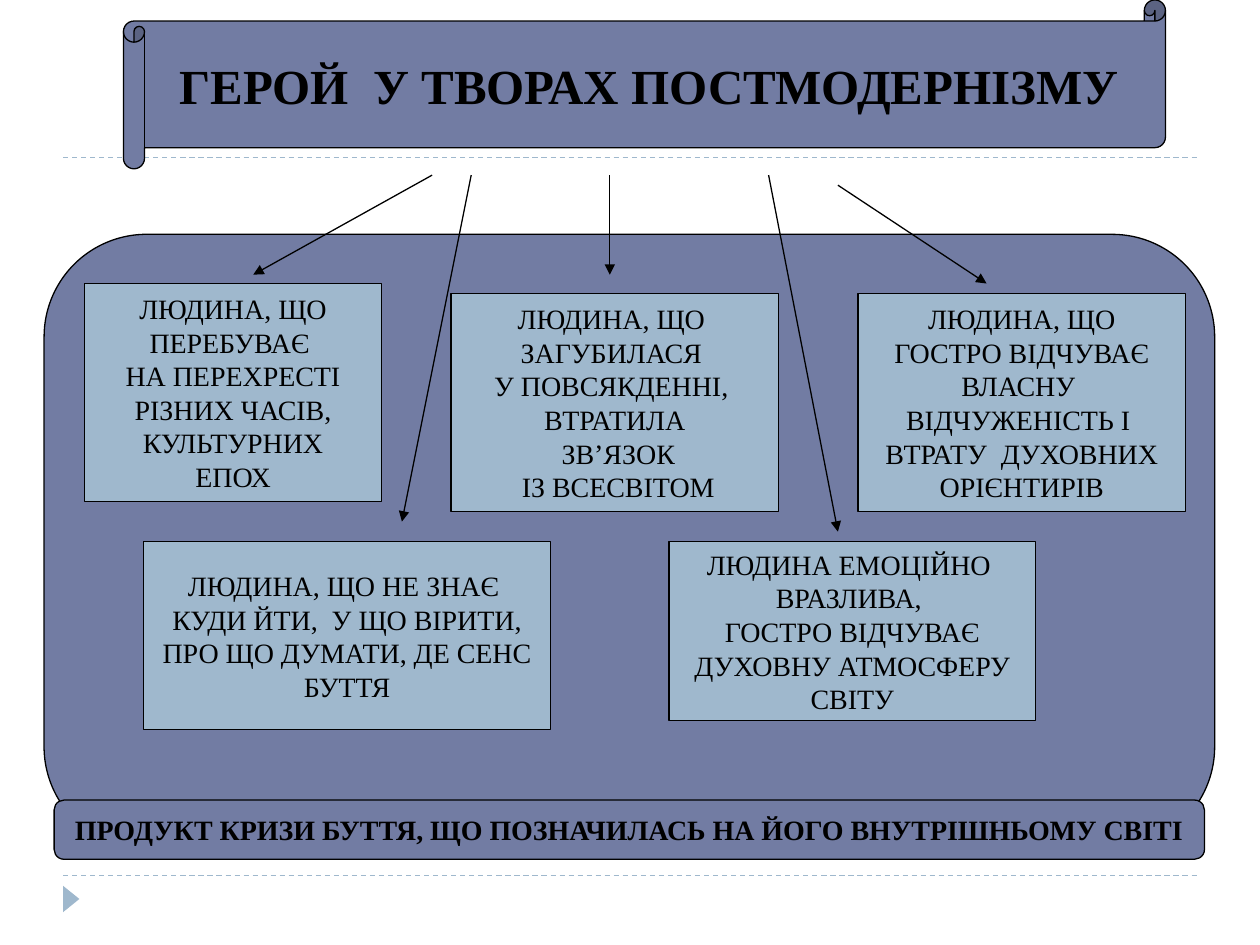
from lxml import etree
from pptx import Presentation
from pptx.dml.color import RGBColor
from pptx.enum.dml import MSO_LINE
from pptx.enum.shapes import MSO_CONNECTOR, MSO_SHAPE
from pptx.enum.text import MSO_ANCHOR, MSO_AUTO_SIZE, PP_ALIGN
from pptx.oxml.ns import qn
from pptx.util import Inches, Pt

RECTANGLE = MSO_SHAPE.RECTANGLE
ROUNDED = MSO_SHAPE.ROUNDED_RECTANGLE
SCROLL = MSO_SHAPE.HORIZONTAL_SCROLL
TRIANGLE = MSO_SHAPE.ISOSCELES_TRIANGLE
STRAIGHT = MSO_CONNECTOR.STRAIGHT
CENTER = PP_ALIGN.CENTER
MIDDLE = MSO_ANCHOR.MIDDLE
DASH = MSO_LINE.DASH

BLACK = RGBColor(0x00, 0x00, 0x00)
INDIGO = RGBColor(0x72, 0x7C, 0xA3)
PALE_BLUE = RGBColor(0x9F, 0xB8, 0xCD)
FONT = "Times New Roman"

HEADING = "ГЕРОЙ  У ТВОРАХ ПОСТМОДЕРНІЗМУ"
CONCLUSION = "ПРОДУКТ КРИЗИ БУТТЯ, ЩО ПОЗНАЧИЛАСЬ НА ЙОГО ВНУТРІШНЬОМУ СВІТІ"

# (left, top, width, height), lines of text
HERO_TRAITS = [
    ((0.67, 2.25, 2.36, 1.73),
     ["ЛЮДИНА, ЩО", "ПЕРЕБУВАЄ ", "НА ПЕРЕХРЕСТІ", " РІЗНИХ ЧАСІВ, ",
      "КУЛЬТУРНИХ", "ЕПОХ"]),
    ((3.58, 2.33, 2.6, 1.73),
     ["ЛЮДИНА, ЩО ", "ЗАГУБИЛАСЯ ", "У ПОВСЯКДЕННІ, ", "ВТРАТИЛА",
      " ЗВ’ЯЗОК", " ІЗ ВСЕСВІТОМ"]),
    ((6.81, 2.33, 2.6, 1.73),
     ["ЛЮДИНА, ЩО", "ГОСТРО ВІДЧУВАЄ", "ВЛАСНУ ", "ВІДЧУЖЕНІСТЬ І ",
      "ВТРАТУ  ДУХОВНИХ", "ОРІЄНТИРІВ"]),
    ((5.31, 4.3, 2.91, 1.42),
     ["ЛЮДИНА ЕМОЦІЙНО ", "ВРАЗЛИВА, ", "ГОСТРО ВІДЧУВАЄ",
      "ДУХОВНУ АТМОСФЕРУ", "СВІТУ"]),
    ((1.14, 4.3, 3.23, 1.49),
     ["ЛЮДИНА, ЩО НЕ ЗНАЄ ", "КУДИ ЙТИ,  У ЩО ВІРИТИ,",
      "ПРО ЩО ДУМАТИ, ДЕ СЕНС", "БУТТЯ"]),
]

# start x, start y, end x, end y
TRAIT_ARROWS = [
    (3.43, 1.39, 2.01, 2.18),
    (3.74, 1.39, 3.19, 4.14),
    (4.84, 1.39, 4.84, 2.18),
    (6.65, 1.47, 7.83, 2.25),
    (6.1, 1.39, 6.65, 4.22),
]
RULE_HEIGHTS = [6.95, 1.25]


def add_block(slide, kind, box, fill, outlined=True):
    block = slide.shapes.add_shape(kind, *map(Inches, box))
    block.shadow.inherit = False
    block.fill.solid()
    block.fill.fore_color.rgb = fill
    if outlined:
        block.line.color.rgb = BLACK
        block.line.width = Pt(0.75)
    else:
        block.line.fill.background()
    return block


def write_centred(shape, text, size, bold=False):
    frame = shape.text_frame
    frame.text = text
    frame.word_wrap = False
    frame.auto_size = MSO_AUTO_SIZE.NONE
    frame.vertical_anchor = MIDDLE
    for paragraph in frame.paragraphs:
        paragraph.alignment = CENTER
        for run in paragraph.runs:
            run.font.name = FONT
            run.font.size = Pt(size)
            run.font.bold = bold
            run.font.color.rgb = BLACK


def add_line(slide, ends, color):
    line = slide.shapes.add_connector(STRAIGHT, *map(Inches, ends))
    line.line.color.rgb = color
    line.line.width = Pt(0.75)
    etree.SubElement(line._element.spPr, qn("a:effectLst"))
    return line


def main():
    prs = Presentation()
    prs.slide_width, prs.slide_height = Inches(10), Inches(7.5)
    slide = prs.slides.add_slide(prs.slide_layouts[5])

    for y in RULE_HEIGHTS:
        add_line(slide, (0.5, y, 9.5, y), PALE_BLUE).line.dash_style = DASH
    marker = add_block(slide, TRIANGLE, (0.46, 7.07, 0.21, 0.13), PALE_BLUE,
                       outlined=False)
    marker.rotation = 90

    scroll = add_block(slide, SCROLL, (0.98, 0, 8.27, 1.34), INDIGO)
    title = slide.shapes.title
    title.left, title.top = Inches(1.15), Inches(0.17)
    title.width, title.height = Inches(8), Inches(1)
    write_centred(title, HEADING, 28, bold=True)
    scroll._element.addnext(title._element)  # title lies on the scroll

    add_block(slide, ROUNDED, (0.35, 1.86, 9.29, 4.88), INDIGO)
    for box, lines in HERO_TRAITS:
        trait = add_block(slide, RECTANGLE, box, PALE_BLUE)
        write_centred(trait, "\n".join(lines), 16)
    conclusion = add_block(slide, ROUNDED, (0.43, 6.35, 9.13, 0.47), INDIGO)
    write_centred(conclusion, CONCLUSION, 16, bold=True)

    for ends in TRAIT_ARROWS:
        arrow = add_line(slide, ends, BLACK)
        etree.SubElement(arrow.line._get_or_add_ln(), qn("a:tailEnd"),
                         type="triangle")

    prs.save("out.pptx")


if __name__ == "__main__":
    main()
